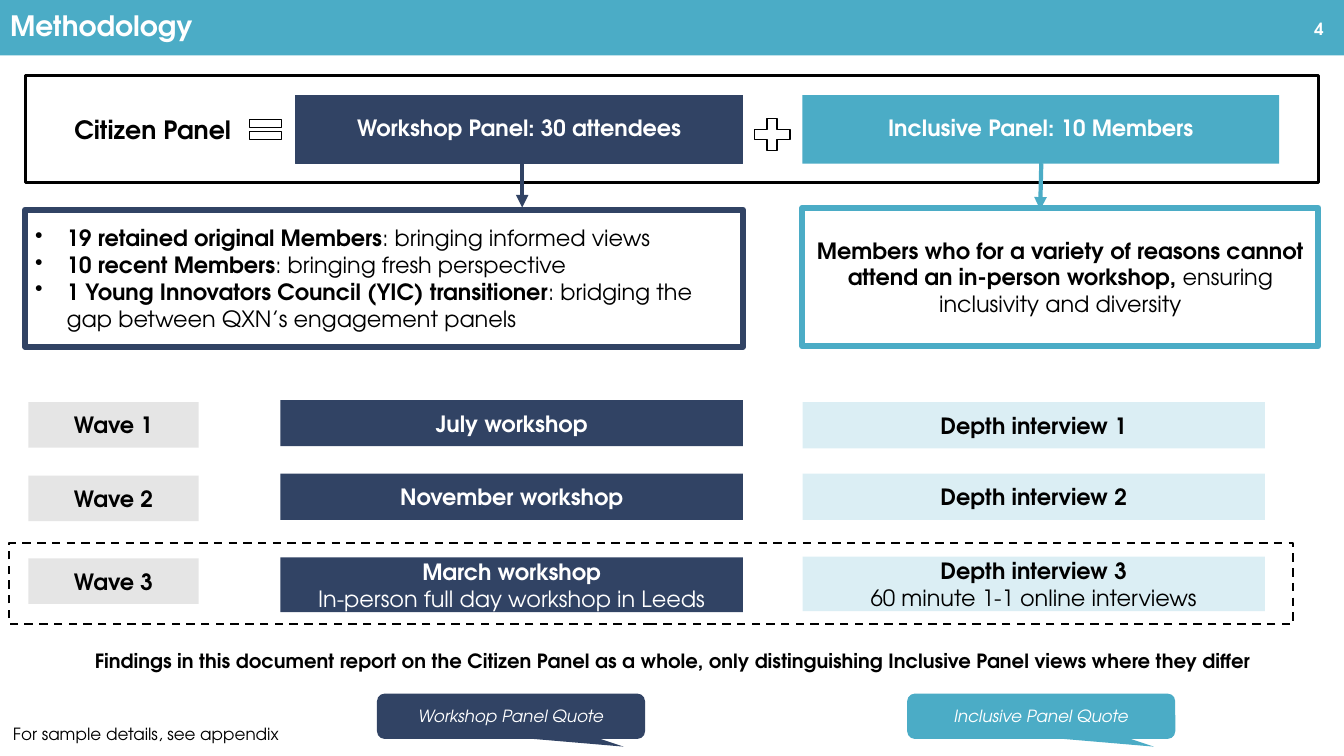
"""Build the methodology slide describing the Citizen Panel."""
import pptx
import pptx.dml.color
import pptx.enum.dml
import pptx.enum.shapes
import pptx.enum.text
import pptx.oxml
import pptx.oxml.ns
import pptx.util

Pt = pptx.util.Pt
RGBColor = pptx.dml.color.RGBColor
Shape = pptx.enum.shapes.MSO_SHAPE
Align = pptx.enum.text.PP_ALIGN
Anchor = pptx.enum.text.MSO_ANCHOR

FONT = "TeX Gyre Adventor"
TEAL = RGBColor(0x4B, 0xAC, 0xC6)
NAVY = RGBColor(0x31, 0x43, 0x64)
PALE = RGBColor(0xDB, 0xEE, 0xF4)
GREY = RGBColor(0xE5, 0xE5, 0xE5)
BLACK = RGBColor(0, 0, 0)
WHITE = RGBColor(0xFF, 0xFF, 0xFF)

RETAINED_MEMBERS = [
    [("19 retained original Members", True), (": bringing informed views", False)],
    [("10 recent Members", True), (": bringing fresh perspective", False)],
    [("1 Young Innovators Council (YIC) transitioner", True),
     (": bridging the gap between QXN’s engagement panels", False)],
]
INCLUSIVE_MEMBERS = [[
    ("Members who for a variety of reasons cannot attend an in-person workshop, ", True),
    ("ensuring inclusivity and diversity", False),
]]
WAVES = [
    (287.3, 285.8, 287.3, 33, [[("July workshop", True)]], [[("Depth interview 1", True)]]),
    (339.8, 338.4, 338.4, 33, [[("November workshop", True)]], [[("Depth interview 2", True)]]),
    (398.9, 398.2, 397.6, 39,
     [[("March workshop", True)], [("In-person full day workshop in Leeds", False)]],
     [[("Depth interview 3", True)], [("60 minute 1-1 online interviews", False)]]),
]


def add_bullet(paragraph):
    """Give a paragraph a hanging round bullet."""
    properties = paragraph._p.get_or_add_pPr()
    properties.set("marL", str(Pt(22.5)))
    properties.set("indent", str(-Pt(22.5)))
    bullet = pptx.oxml.parse_xml(
        f'<a:buChar {pptx.oxml.ns.nsdecls("a")} char="•"/>')
    properties.append(bullet)


def write(shape, paragraphs, color=BLACK, size=16, align=Align.CENTER,
          anchor=Anchor.MIDDLE, italic=False, bulleted=False, spacing=None, after=0):
    """Fill a shape with paragraphs made of (text, bold) runs."""
    frame = shape.text_frame
    frame.word_wrap = True
    frame.auto_size = pptx.enum.text.MSO_AUTO_SIZE.NONE
    frame.vertical_anchor = anchor
    for index, runs in enumerate(paragraphs):
        paragraph = frame.add_paragraph() if index else frame.paragraphs[0]
        paragraph.alignment = align
        paragraph.space_before = Pt(0)
        paragraph.space_after = Pt(after)
        paragraph.line_spacing = spacing
        if bulleted:
            add_bullet(paragraph)
        for text, bold in runs:
            run = paragraph.add_run()
            run.text = text
            run.font.name = FONT
            run.font.size = Pt(size)
            run.font.bold = bold
            run.font.italic = italic
            run.font.color.rgb = color


def add_title(slide, text):
    """Turn the title placeholder into the band across the top."""
    title = slide.shapes.title
    title.left, title.top, title.width, title.height = Pt(0), Pt(0), Pt(960), Pt(39.6)
    title.fill.solid()
    title.fill.fore_color.rgb = TEAL
    write(title, [[(text, True)]], WHITE, 20, Align.LEFT, spacing=0.9)


def add_box(slide, left, top, width, height, fill=None, line=None, weight=1,
            kind=Shape.RECTANGLE):
    """Add a preset shape with an optional fill and outline."""
    box = slide.shapes.add_shape(kind, Pt(left), Pt(top), Pt(width), Pt(height))
    box.shadow.inherit = False
    if fill is None:
        box.fill.background()
    else:
        box.fill.solid()
        box.fill.fore_color.rgb = fill
    if line is None:
        box.line.fill.background()
    else:
        box.line.color.rgb = line
        box.line.width = Pt(weight)
    return box


def add_label(slide, left, top, width, height, text, bold=False, **style):
    """Add a one-line text box."""
    label = slide.shapes.add_textbox(Pt(left), Pt(top), Pt(width), Pt(height))
    write(label, [[(text, bold)]], **style)


def add_arrow(slide, start_x, end_x, end_y, color):
    """Add a downward arrow from a panel heading to its description."""
    arrow = slide.shapes.add_connector(
        pptx.enum.shapes.MSO_CONNECTOR.STRAIGHT,
        Pt(start_x), Pt(116.6), Pt(end_x), Pt(end_y))
    arrow.line.color.rgb = color
    arrow.line.width = Pt(3)
    namespace = pptx.oxml.ns.nsdecls("a")
    arrow.line._get_or_add_ln().append(
        pptx.oxml.parse_xml(f'<a:tailEnd {namespace} type="triangle"/>'))
    arrow._element.spPr.append(pptx.oxml.parse_xml(f"<a:effectLst {namespace}/>"))


def add_quote(slide, left, text, fill):
    """Add a speech bubble that keys one panel's quotes."""
    bubble = add_box(slide, left, 495.4, 191.5, 32.4, fill,
                     kind=Shape.ROUNDED_RECTANGULAR_CALLOUT)
    for index, value in enumerate((0.42, 0.67, 0.17)):
        bubble.adjustments[index] = value
    write(bubble, [[(text, False)]], WHITE, 12, italic=True, after=3)


def add_panel_equation(slide):
    """Add the framed row that sums the two panels."""
    workshop = add_box(slide, 211, 67.9, 319.6, 49, NAVY, NAVY, 0.75)
    write(workshop, [[("Workshop Panel: 30 attendees", True)]], WHITE, spacing=0.9)
    inclusive = add_box(slide, 573.1, 67.9, 340.6, 49, TEAL)
    write(inclusive, [[("Inclusive Panel: 10 Members", True)]], WHITE, spacing=0.9)
    add_label(slide, 46, 67.9, 261, 49, "Citizen Panel", True, size=18, align=Align.LEFT)
    add_box(slide, 174.2, 80.6, 31, 23.8, line=BLACK, kind=Shape.MATH_EQUAL)
    add_box(slide, 534.2, 80.6, 34.6, 31, line=BLACK, kind=Shape.MATH_PLUS)
    add_box(slide, 18, 54, 923.8, 76.3, line=BLACK, weight=2.25)


def add_panel_details(slide):
    """Add the description of each panel and the arrows to them."""
    retained = add_box(slide, 18, 149.8, 512.6, 97.9, line=NAVY, weight=4.5)
    write(retained, RETAINED_MEMBERS, align=Align.LEFT, bulleted=True)
    inclusive = add_box(slide, 573.1, 148.6, 368.6, 98.6, line=TEAL, weight=4.5)
    write(inclusive, INCLUSIVE_MEMBERS)
    add_arrow(slide, 373, 373, 148.3, NAVY)
    add_arrow(slide, 743.8, 743, 149.8, TEAL)


def add_waves(slide):
    """Add one row per research wave and mark the current one."""
    for number, wave in enumerate(WAVES, start=1):
        label_top, workshop_top, interview_top, height, workshop, interview = wave
        label = add_box(slide, 20.2, label_top, 121.7, 32.4, GREY)
        write(label, [[(f"Wave {number}", True)]])
        write(add_box(slide, 200.2, workshop_top, 330.5, height, NAVY), workshop, WHITE)
        write(add_box(slide, 573.3, interview_top, 330.2, height, PALE), interview)
    current = add_box(slide, 6.5, 388.1, 917.3, 57.6, line=BLACK, weight=1.5)
    current.line.dash_style = pptx.enum.dml.MSO_LINE.DASH


def main():
    """Build and save the slide."""
    presentation = pptx.Presentation()
    presentation.slide_width, presentation.slide_height = Pt(960), Pt(540)
    slide = presentation.slides.add_slide(presentation.slide_layouts[5])
    add_title(slide, "Methodology")
    add_panel_equation(slide)
    add_panel_details(slide)
    add_waves(slide)
    add_quote(slide, 648, "Inclusive Panel Quote", TEAL)
    add_quote(slide, 269.3, "Workshop Panel Quote", NAVY)
    add_label(slide, 2.2, 513.4, 247.7, 21.6, "For sample details, see appendix",
              size=12, align=Align.LEFT, anchor=Anchor.TOP)
    add_label(slide, 905.8, 4.3, 46.8, 32.4, "4", True,
              size=12, color=WHITE, align=Align.RIGHT)
    add_label(slide, 20.2, 460.1, 921.6, 24.5,
              "Findings in this document report on the Citizen Panel as a whole, "
              "only distinguishing Inclusive Panel views where they differ",
              True, size=14, anchor=Anchor.TOP)
    presentation.save("out.pptx")


if __name__ == "__main__":
    main()
